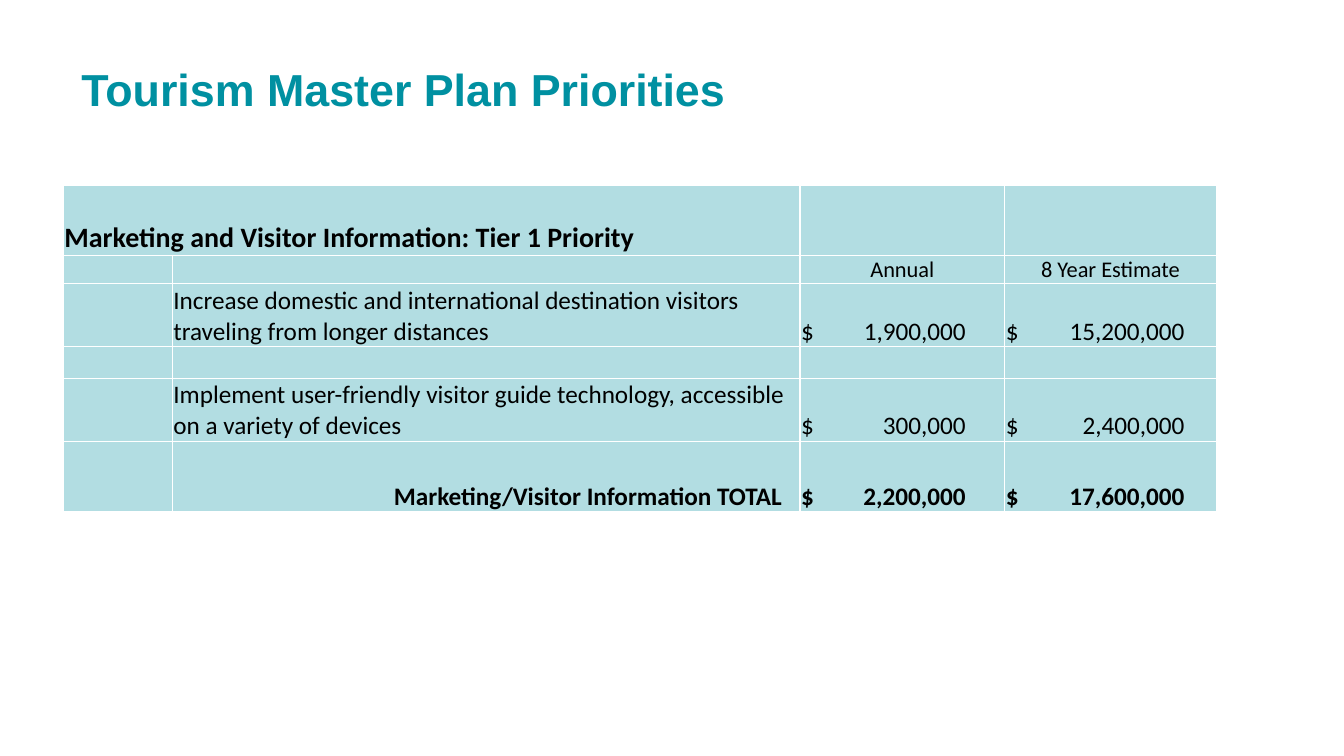
from dataclasses import dataclass

import pptx
import pptx.dml.color
import pptx.enum.text
import pptx.oxml.ns
import pptx.util
from lxml import etree

Cm = pptx.util.Cm
Pt = pptx.util.Pt
Align = pptx.enum.text.PP_ALIGN
Anchor = pptx.enum.text.MSO_ANCHOR


@dataclass(frozen=True)
class Theme:
    teal: str = "0090A1"
    black: str = "000000"
    white: str = "FFFFFF"
    title_font: str = "Arial"
    table_font: str = "Calibri"
    title_size: int = 32
    section_size: int = 20
    body_size: int = 18
    column_size: int = 16
    fill_opacity: int = 30
    border_width: int = 1


def add_child(parent, tag, **attributes):
    child = etree.SubElement(parent, pptx.oxml.ns.qn(tag))
    for name, value in attributes.items():
        child.set(name, str(value))
    return child


def write_text(frame, text, *, font, size, color, bold=False,
               align=Align.LEFT, line_spacing=None, tab=None):
    """Fill the first paragraph; tab is the place in cm of a right tab stop."""
    paragraph = frame.paragraphs[0]
    paragraph.alignment = align
    if line_spacing:
        paragraph.line_spacing = line_spacing
    if tab:
        stops = add_child(paragraph._p.get_or_add_pPr(), "a:tabLst")
        add_child(stops, "a:tab", pos=int(Cm(tab)), algn="r")
    if not text:
        add_child(paragraph._p, "a:endParaRPr", sz=size * 100)
        return
    run = paragraph.add_run()
    run.text = text
    run.font.name = font
    run.font.size = Pt(size)
    run.font.bold = bold
    run.font.color.rgb = pptx.dml.color.RGBColor.from_string(color)


class SlideBuilder:
    def __init__(self, slide, theme):
        self.slide = slide
        self.theme = theme

    def title(self, text, left, top, width, height):
        box = self.slide.shapes.add_textbox(Cm(left), Cm(top), Cm(width), Cm(height))
        frame = box.text_frame
        frame.word_wrap = True
        frame.vertical_anchor = Anchor.MIDDLE
        write_text(frame, text, font=self.theme.title_font, size=self.theme.title_size,
                   color=self.theme.teal, bold=True, line_spacing=0.9)

    def table(self, left, top, column_widths, row_heights):
        frame = self.slide.shapes.add_table(
            len(row_heights), len(column_widths), Cm(left), Cm(top),
            Cm(sum(column_widths)), Cm(sum(row_heights)))
        table = frame.table
        table.first_row = False
        table.horz_banding = False
        for column, width in zip(table.columns, column_widths):
            column.width = Cm(width)
        for row, height in zip(table.rows, row_heights):
            row.height = Cm(height)
        return table

    def cell(self, cell, text, *, size, right_margin=0.03, **text_format):
        cell.margin_left = cell.margin_top = Cm(0.03)
        cell.margin_right = Cm(right_margin)
        cell.margin_bottom = 0
        cell.vertical_anchor = Anchor.BOTTOM
        self.borders(cell)
        self.tint(cell)
        write_text(cell.text_frame, text, font=self.theme.table_font, size=size,
                   color=self.theme.black, **text_format)

    def borders(self, cell):
        for side in ("a:lnL", "a:lnR", "a:lnT", "a:lnB"):
            line = add_child(cell._tc.get_or_add_tcPr(), side,
                             w=int(Pt(self.theme.border_width)))
            add_child(add_child(line, "a:solidFill"), "a:srgbClr", val=self.theme.white)

    def tint(self, cell):
        """Fill the cell with translucent teal."""
        cell.fill.solid()
        cell.fill.fore_color.rgb = pptx.dml.color.RGBColor.from_string(self.theme.teal)
        color = cell._tc.tcPr.find(pptx.oxml.ns.qn("a:solidFill"))[0]
        add_child(color, "a:alpha", val=self.theme.fill_opacity * 1000)


def add_priorities(builder):
    theme = builder.theme
    section = {"size": theme.section_size, "bold": True}
    columns = {"size": theme.column_size, "align": Align.CENTER}
    body = {"size": theme.body_size}
    total = {"size": theme.body_size, "bold": True}
    # Height in cm, text format, cell texts
    rows = [
        (1.75, section, ("Marketing and Visitor Information: Tier 1 Priority", "", "", "")),
        (0.71, columns, ("", "", "Annual", "8 Year Estimate")),
        (1.6, body, ("", "Increase domestic and international destination visitors "
                     "traveling from longer distances", "$\t1,900,000", "$\t15,200,000")),
        (0.8, body, ("", "", "", "")),
        (1.58, body, ("", "Implement user-friendly visitor guide technology, accessible "
                      "on a variety of devices", "$\t300,000", "$\t2,400,000")),
        (1.78, total, ("", "Marketing/Visitor Information TOTAL",
                       "$\t2,200,000", "$\t17,600,000")),
    ]
    amount_tabs = {2: 4.15, 3: 4.5}
    priorities = builder.table(1.59, 4.68, [2.75, 15.82, 5.16, 5.33],
                               [height for height, _, _ in rows])
    priorities.cell(0, 0).merge(priorities.cell(0, 1))
    for row, (_, row_format, texts) in enumerate(rows):
        for column, text in enumerate(texts):
            cell_format = dict(row_format)
            if "$" in text:
                cell_format["tab"] = amount_tabs[column]
            if row_format is total and column == 1:
                cell_format.update(align=Align.RIGHT, right_margin=0.45)
            builder.cell(priorities.cell(row, column), text, **cell_format)


def main():
    presentation = pptx.Presentation()
    presentation.slide_width = Cm(33.87)
    presentation.slide_height = Cm(19.05)
    slide = presentation.slides.add_slide(presentation.slide_layouts[6])
    builder = SlideBuilder(slide, Theme())
    builder.title("Tourism Master Plan Priorities", 1.8, 1.63, 29.21, 1.37)
    add_priorities(builder)
    presentation.save("out.pptx")


if __name__ == "__main__":
    main()
